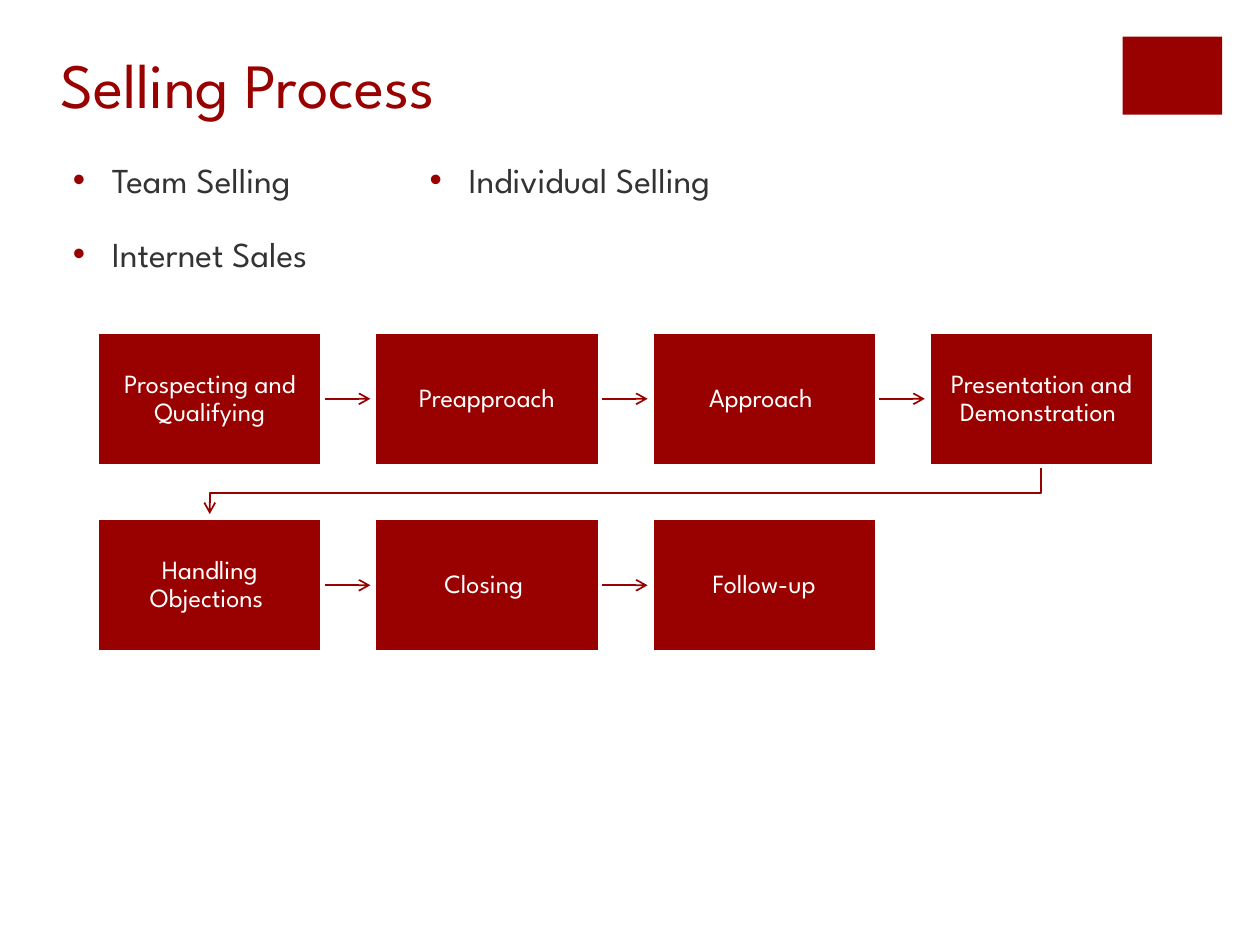
from dataclasses import dataclass

from lxml.etree import SubElement
from pptx import Presentation
from pptx.dml.color import RGBColor
from pptx.enum.shapes import MSO_CONNECTOR, MSO_SHAPE
from pptx.enum.text import MSO_ANCHOR, PP_ALIGN
from pptx.oxml.ns import qn
from pptx.util import Inches, Pt

COLORS = {"red": "990000", "white": "FFFFFF", "text": "333333"}
FONT = "League Spartan"

# Process grid, in inches
GRID_LEFT, GRID_TOP = 0.77, 2.63
BOX_WIDTH, BOX_HEIGHT = 1.79, 1.07
COLUMN_PITCH, ROW_PITCH = 2.2, 1.48
ARROW_LENGTH = 0.38
STEP_MARGIN = Inches(0.12)
STEP_FRAME = {
    "word_wrap": True,
    "vertical_anchor": MSO_ANCHOR.MIDDLE,
    "margin_left": STEP_MARGIN,
    "margin_top": STEP_MARGIN,
    "margin_right": STEP_MARGIN,
    "margin_bottom": STEP_MARGIN,
}


@dataclass
class Step:
    label: str
    row: int
    column: int

    @property
    def left(self) -> float:
        return GRID_LEFT + self.column * COLUMN_PITCH

    @property
    def top(self) -> float:
        return GRID_TOP + self.row * ROW_PITCH

    @property
    def center(self) -> float:
        return self.left + BOX_WIDTH / 2

    @property
    def middle(self) -> float:
        return self.top + BOX_HEIGHT / 2


ROWS = [
    ["Prospecting and Qualifying", "Preapproach", "Approach ",
     "Presentation and Demonstration "],
    ["Handling Objections ", "Closing ", "Follow-up"],
]
SALES_TYPES = ["Team Selling", "Internet Sales", "Individual Selling"]


def rgb(name: str) -> RGBColor:
    return RGBColor.from_string(COLORS[name])


def add_text(paragraph, text: str, size: float, color: str) -> None:
    run = paragraph.add_run()
    run.text = text
    for name, value in {"name": FONT, "size": Pt(size)}.items():
        setattr(run.font, name, value)
    run.font.color.rgb = rgb(color)


def add_block(slide, left: float, top: float, width: float, height: float):
    block = slide.shapes.add_shape(
        MSO_SHAPE.RECTANGLE, Inches(left), Inches(top), Inches(width), Inches(height))
    block.shadow.inherit = False
    block.fill.solid()
    block.fill.fore_color.rgb = rgb("red")
    block.line.fill.background()
    return block


def add_frame(slide, left: float, top: float, width: float, height: float):
    box = slide.shapes.add_textbox(
        Inches(left), Inches(top), Inches(width), Inches(height))
    box.text_frame.word_wrap = True
    return box.text_frame


def add_step(slide, step: Step):
    block = add_block(slide, step.left, step.top, BOX_WIDTH, BOX_HEIGHT)
    block.line.color.rgb = rgb("white")
    block.line.width = Pt(2.5)
    frame = block.text_frame
    for name, value in STEP_FRAME.items():
        setattr(frame, name, value)
    paragraph = frame.paragraphs[0]
    paragraph.alignment = PP_ALIGN.CENTER
    paragraph.line_spacing = 0.9
    add_text(paragraph, step.label, 15, "white")
    return block


def style_arrow(arrow, block) -> None:
    """Give the arrow its line and head, and put it behind its starting block."""
    arrow.line.color.rgb = rgb("red")
    arrow.line.width = Pt(1)
    SubElement(arrow.line._get_or_add_ln(), qn("a:tailEnd"), type="arrow")
    block._element.addprevious(arrow._element)


def add_next_arrow(slide, step: Step, block) -> None:
    start = step.left + BOX_WIDTH
    arrow = slide.shapes.add_connector(
        MSO_CONNECTOR.STRAIGHT, Inches(start), Inches(step.middle),
        Inches(start + ARROW_LENGTH), Inches(step.middle))
    arrow.begin_connect(block, 3)
    style_arrow(arrow, block)
    SubElement(arrow._element.spPr, qn("a:effectLst"))


def add_row_arrow(slide, step: Step, following: Step, block) -> None:
    start_y = step.top + BOX_HEIGHT
    turn_y = start_y + 0.21
    end_y = following.top - 0.03
    points = [(step.center, turn_y), (following.center, turn_y),
              (following.center, end_y)]
    builder = slide.shapes.build_freeform(Inches(step.center), Inches(start_y))
    builder.add_line_segments([(Inches(x), Inches(y)) for x, y in points], close=False)
    arrow = builder.convert_to_shape()
    arrow.fill.background()
    arrow.shadow.inherit = False
    style_arrow(arrow, block)


def add_bullet(paragraph) -> None:
    properties = paragraph._p.get_or_add_pPr()
    properties.set("marL", str(Inches(0.31)))
    properties.set("indent", str(-Inches(0.31)))
    bullet_color = SubElement(properties, qn("a:buClr"))
    SubElement(bullet_color, qn("a:srgbClr"), val=COLORS["red"])
    SubElement(properties, qn("a:buFont"), typeface="Arial")
    SubElement(properties, qn("a:buChar"), char="•")


def main() -> None:
    presentation = Presentation()
    presentation.slide_width = Inches(10)
    presentation.slide_height = Inches(7.5)
    slide = presentation.slides.add_slide(presentation.slide_layouts[6])

    # Corner block
    add_block(slide, 8.91, 0.29, 0.79, 0.62)

    # Process steps, then the arrows from each to the next
    steps = [Step(label, row, column)
             for row, labels in enumerate(ROWS)
             for column, label in enumerate(labels)]
    blocks = [add_step(slide, step) for step in steps]
    for step, following, block in zip(steps, steps[1:], blocks):
        if step.row == following.row:
            add_next_arrow(slide, step, block)
        else:
            add_row_arrow(slide, step, following, block)

    # Title
    title = add_frame(slide, 0.38, 0.31, 9.62, 1.77)
    add_text(title.paragraphs[0], "Selling Process", 36, "red")

    # Sales types, flowing through three columns
    sales_types = add_frame(slide, 0.48, 1.21, 8.69, 1.2)
    sales_types._txBody.bodyPr.set("numCol", "3")
    for index, sales_type in enumerate(SALES_TYPES):
        paragraph = sales_types.add_paragraph() if index else sales_types.paragraphs[0]
        add_bullet(paragraph)
        if index:
            paragraph.space_before = Pt(18)
        add_text(paragraph, sales_type, 20, "text")

    presentation.save("out.pptx")


if __name__ == "__main__":
    main()
